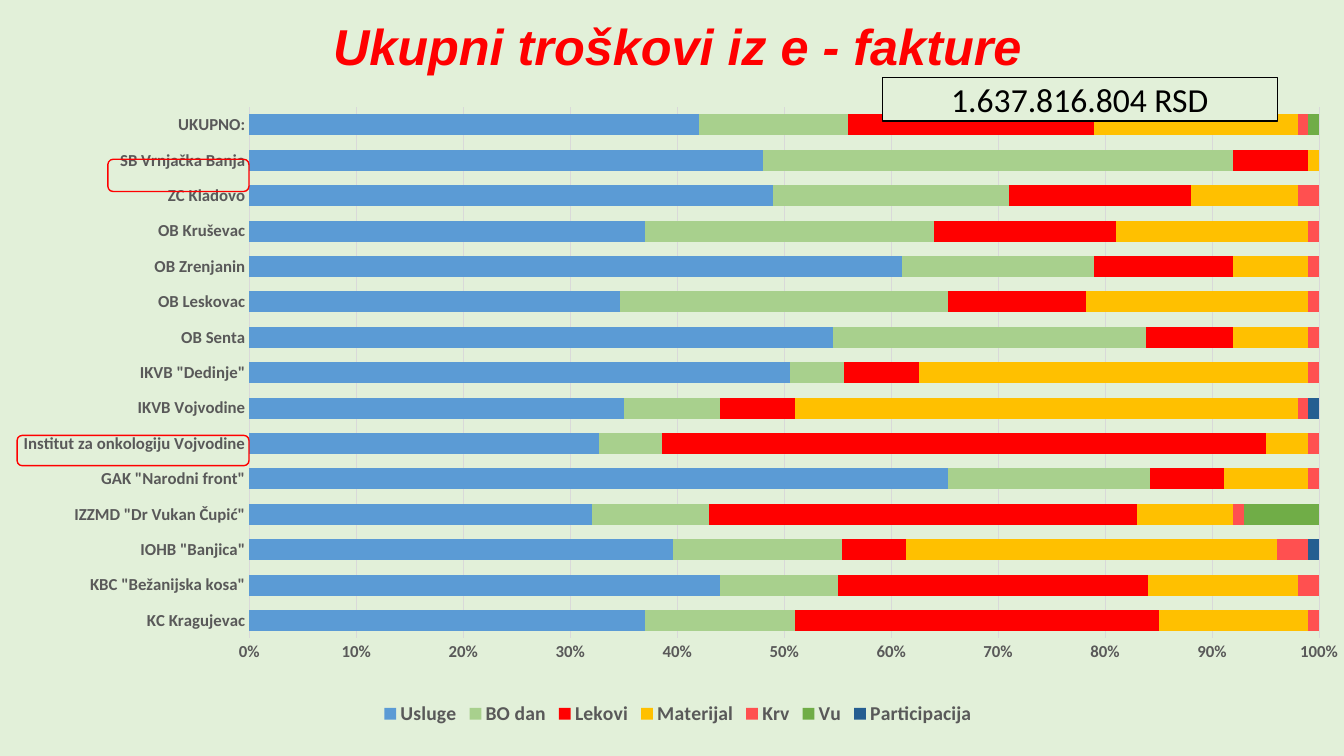
from dataclasses import dataclass

from lxml import etree
from pptx import Presentation
from pptx.chart.data import CategoryChartData
from pptx.dml.color import RGBColor
from pptx.enum.chart import XL_CHART_TYPE, XL_LEGEND_POSITION, XL_TICK_MARK
from pptx.enum.shapes import MSO_SHAPE
from pptx.enum.text import MSO_ANCHOR, PP_ALIGN
from pptx.oxml.ns import qn
from pptx.util import Inches, Pt


@dataclass(frozen=True)
class Theme:
    background: str = "E2F0D9"
    accent: str = "FF0000"
    ink: str = "000000"
    label: str = "595959"
    grid: str = "D9D9D9"
    title_font: str = "Arial"
    body_font: str = "Calibri"
    title_size: int = 36
    total_size: int = 24
    legend_size: int = 14
    axis_size: int = 12


THEME = Theme()

INSTITUTIONS = [
    "KC Kragujevac", 'KBC "Bežanijska kosa"', 'IOHB "Banjica"',
    'IZZMD "Dr Vukan Čupić"', 'GAK "Narodni front"',
    "Institut za onkologiju Vojvodine", "IKVB Vojvodine", 'IKVB "Dedinje"',
    "OB Senta", "OB Leskovac", "OB Zrenjanin", "OB Kruševac",
    "ZC Kladovo", "SB Vrnjačka Banja", "UKUPNO:",
]

# Cost type, colour, share in percent per institution
COSTS = [
    ("Usluge", "5B9BD5", [37, 44, 40, 32, 66, 33, 35, 50, 54, 35, 61, 37, 49, 48, 42]),
    ("BO dan", "A8D08D", [14, 11, 16, 11, 19, 6, 9, 5, 29, 31, 18, 27, 22, 44, 14]),
    ("Lekovi", "FF0000", [34, 29, 6, 40, 7, 57, 7, 7, 8, 13, 13, 17, 17, 7, 23]),
    ("Materijal", "FFC000", [14, 14, 35, 9, 8, 4, 47, 36, 7, 21, 7, 18, 10, 1, 19]),
    ("Krv", "FF5050", [1, 2, 3, 1, 1, 1, 1, 1, 1, 1, 1, 1, 2, 0, 1]),
    ("Vu", "70AD47", [0, 0, 0, 7, 0, 0, 0, 0, 0, 0, 0, 0, 0, 0, 1]),
    ("Participacija", "255E91", [0, 0, 1, 0, 0, 0, 1, 0, 0, 0, 0, 0, 0, 0, 0]),
]

# Outlines around two institution names: left, top, width, height
HIGHLIGHTS = [(1.07, 1.58, 1.4, 0.32), (0.17, 4.32, 2.3, 0.3)]


def rgb(value):
    return RGBColor.from_string(value)


def style_font(font, name, size, color, bold=False, italic=False):
    font.name = name
    font.size = Pt(size)
    font.color.rgb = rgb(color)
    font.bold = bold
    font.italic = italic


def place(shape, left, top, width, height):
    shape.left, shape.top = Inches(left), Inches(top)
    shape.width, shape.height = Inches(width), Inches(height)


def add_title(page, text):
    title = page.shapes.title
    place(title, 0.97, 0, 11.5, 0.98)
    title.text_frame.text = text
    title.text_frame.vertical_anchor = MSO_ANCHOR.MIDDLE
    para = title.text_frame.paragraphs[0]
    para.alignment = PP_ALIGN.CENTER
    para.line_spacing = 0.9
    style_font(para.font, THEME.title_font, THEME.title_size, THEME.accent,
               bold=True, italic=True)


def add_outline(page, kind, bounds, color):
    shape = page.shapes.add_shape(kind, *map(Inches, bounds))
    shape.shadow.inherit = False
    shape.fill.background()
    shape.line.color.rgb = rgb(color)
    shape.line.width = Pt(1)
    return shape


def add_total(page, text):
    box = add_outline(page, MSO_SHAPE.RECTANGLE, (8.75, 0.77, 3.92, 0.43), THEME.ink)
    box.fill.solid()
    box.fill.fore_color.rgb = rgb(THEME.background)
    box.text_frame.text = text
    box.text_frame.vertical_anchor = MSO_ANCHOR.MIDDLE
    para = box.text_frame.paragraphs[0]
    para.alignment = PP_ALIGN.CENTER
    style_font(para.font, THEME.body_font, THEME.total_size, THEME.ink)


def set_plot_area(chart, x, y, w, h):
    plot_area = chart.plots[0]._element.getparent()
    for old in plot_area.findall(qn("c:layout")):
        plot_area.remove(old)
    layout = etree.Element(qn("c:layout"))
    manual = etree.SubElement(layout, qn("c:manualLayout"))
    settings = [("layoutTarget", "inner"), ("xMode", "edge"), ("yMode", "edge"),
                ("x", x), ("y", y), ("w", w), ("h", h)]
    for tag, value in settings:
        etree.SubElement(manual, qn(f"c:{tag}")).set("val", str(value))
    plot_area.insert(0, layout)


def style_axis(axis):
    axis.major_tick_mark = axis.minor_tick_mark = XL_TICK_MARK.NONE
    axis.format.line.fill.background()
    style_font(axis.tick_labels.font, THEME.body_font, THEME.axis_size,
               THEME.label, bold=True)


def add_cost_chart(page):
    data = CategoryChartData()
    data.categories = INSTITUTIONS
    for name, _, shares in COSTS:
        data.add_series(name, shares)
    frame = page.shapes.add_chart(XL_CHART_TYPE.BAR_STACKED_100,
                                  *map(Inches, (0.06, 1.02, 13.33, 6.22)), data)
    chart = frame.chart
    chart.has_title = False
    style_font(chart.font, THEME.body_font, THEME.axis_size, THEME.ink)
    set_plot_area(chart, 0.18, 0.01, 0.8, 0.85)
    set_plot_area(chart, 0.181, 0.007, 0.796, 0.847)

    # Bars
    plot = chart.plots[0]
    plot.gap_width, plot.overlap = 68, 100
    plot.vary_by_categories = False
    for series, (_, color, _) in zip(plot.series, COSTS):
        series.format.fill.solid()
        series.format.fill.fore_color.rgb = rgb(color)

    # Axes and grid
    style_axis(chart.category_axis)
    value_axis = chart.value_axis
    style_axis(value_axis)
    value_axis.minimum_scale, value_axis.maximum_scale = 0, 1
    value_axis.major_unit = 0.1
    value_axis.tick_labels.number_format = "0%"
    value_axis.tick_labels.number_format_is_linked = False
    grid_line = value_axis.major_gridlines.format.line
    grid_line.color.rgb = rgb(THEME.grid)
    grid_line.width = Pt(0.75)

    # Legend
    chart.has_legend = True
    chart.legend.position = XL_LEGEND_POSITION.BOTTOM
    chart.legend.include_in_layout = False
    style_font(chart.legend.font, THEME.body_font, THEME.legend_size,
               THEME.label, bold=True)


def main():
    deck = Presentation()
    deck.slide_width, deck.slide_height = Inches(13.33), Inches(7.5)
    page = deck.slides.add_slide(deck.slide_layouts[5])
    page.background.fill.solid()
    page.background.fill.fore_color.rgb = rgb(THEME.background)

    add_title(page, "Ukupni troškovi iz e - fakture")
    add_cost_chart(page)
    add_total(page, "1.637.816.804 RSD")
    for bounds in HIGHLIGHTS:
        add_outline(page, MSO_SHAPE.ROUNDED_RECTANGLE, bounds, THEME.accent)

    deck.save("out.pptx")


if __name__ == "__main__":
    main()
